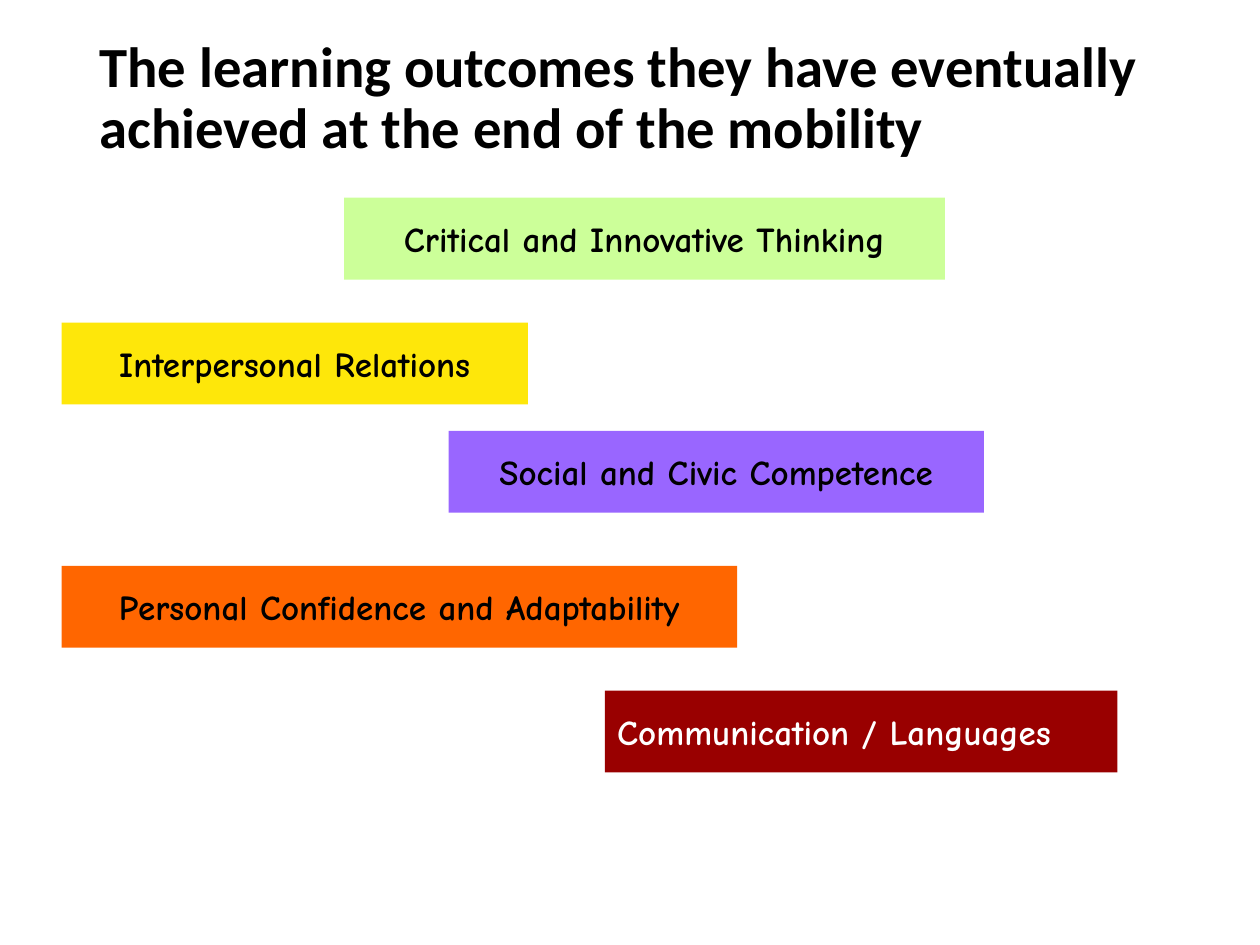
import pptx
import pptx.util
import pptx.dml.color
import pptx.enum.shapes
import pptx.enum.text

Pt = pptx.util.Pt
Align = pptx.enum.text.PP_ALIGN
Anchor = pptx.enum.text.MSO_ANCHOR

HUES = {
    "black": "000000",
    "white": "FFFFFF",
    "lime": "CCFF99",
    "yellow": "FEE70A",
    "violet": "9966FF",
    "orange": "FF6600",
    "maroon": "990000",
}

BAR_HEIGHT = 46.8
BARS = [
    ("Critical and Innovative Thinking", 196.6, 113, 343.4, "lime", "black", Align.CENTER),
    ("Interpersonal Relations", 35.3, 184.3, 266.4, "yellow", "black", Align.CENTER),
    ("Social and Civic Competence", 256.3, 246.2, 306, "violet", "black", Align.CENTER),
    ("Personal Confidence and Adaptability", 35.3, 323.3, 385.9, "orange", "black", Align.CENTER),
    ("Communication / Languages", 345.6, 394.6, 293, "maroon", "white", Align.LEFT),
]


def color(name):
    return pptx.dml.color.RGBColor.from_string(HUES[name])


def write(shape, text, face, size, ink, align):
    frame = shape.text_frame
    frame.word_wrap = True
    frame.auto_size = pptx.enum.text.MSO_AUTO_SIZE.NONE
    frame.vertical_anchor = Anchor.MIDDLE
    frame.text = text
    para = frame.paragraphs[0]
    para.alignment = align
    font = para.font
    font.name = face
    font.size = Pt(size)
    font.bold = True
    font.color.rgb = color(ink)
    return para


def add_title(slide, left, top, width, height):
    title = slide.shapes.title
    title.left, title.top = Pt(left), Pt(top)
    title.width, title.height = Pt(width), Pt(height)
    para = write(
        title,
        "The learning outcomes they have eventually achieved at the end of the mobility",
        "Calibri", 32.4, "black", Align.LEFT,
    )
    para.line_spacing = 0.9


def add_bar(slide, left, top, width, height, text, fill, ink, align):
    bar = slide.shapes.add_shape(
        pptx.enum.shapes.MSO_SHAPE.RECTANGLE,
        Pt(left), Pt(top), Pt(width), Pt(height),
    )
    bar.shadow.inherit = False
    bar.fill.solid()
    bar.fill.fore_color.rgb = color(fill)
    bar.line.fill.background()
    write(bar, text, "Comic Neue", 20, ink, align)


def main():
    deck = pptx.Presentation()
    deck.slide_width, deck.slide_height = Pt(720), Pt(540)
    slide = deck.slides.add_slide(deck.slide_layouts[5])
    add_title(slide, 49.7, 28.8, 620.6, 56.2)
    for text, left, top, width, fill, ink, align in BARS:
        add_bar(slide, left, top, width, BAR_HEIGHT, text, fill, ink, align)
    deck.save("out.pptx")


if __name__ == "__main__":
    main()
